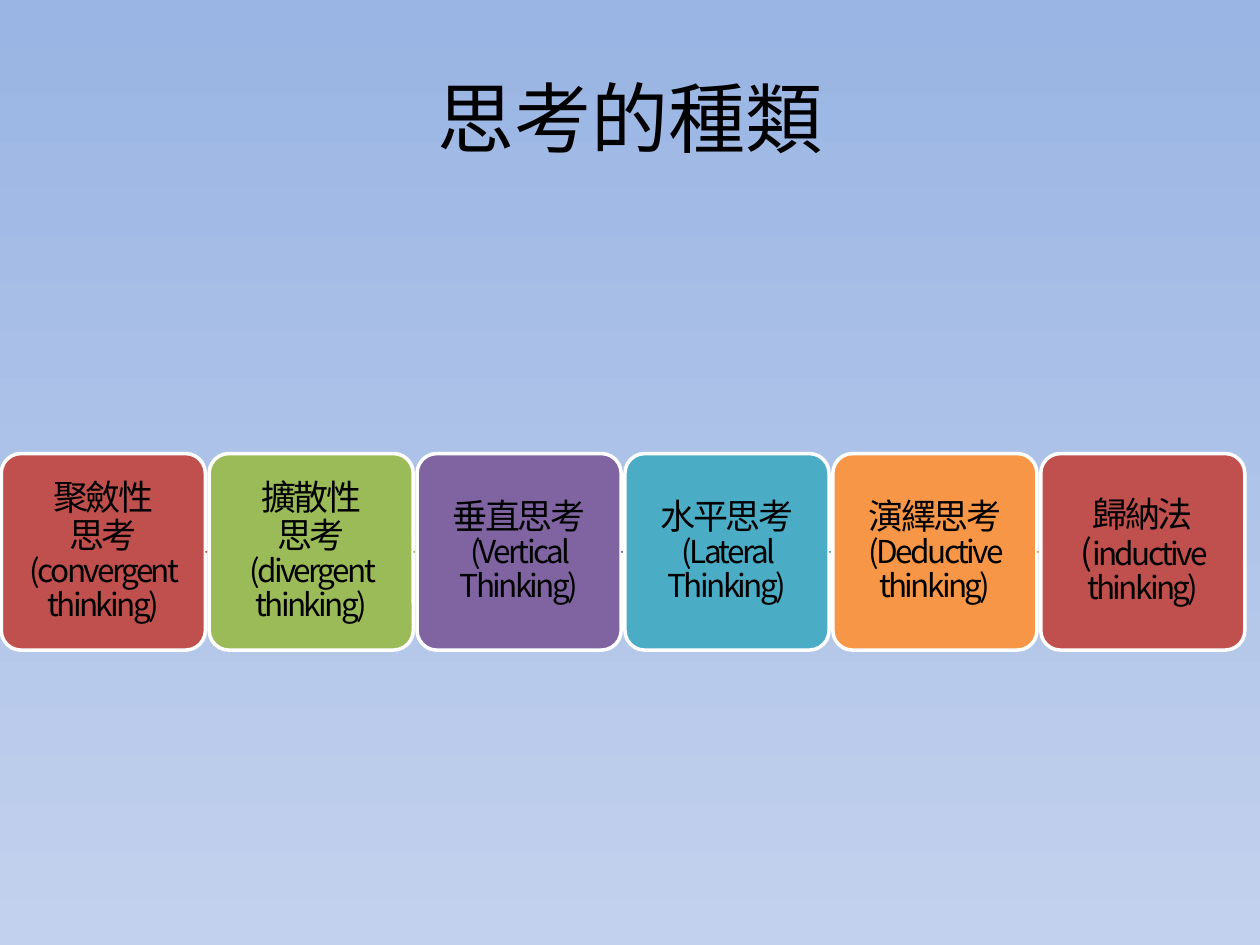
from lxml import etree
from pptx import Presentation
from pptx.dml.color import RGBColor
from pptx.enum import shapes, text
from pptx.oxml import ns
from pptx.util import Inches, Pt

FONT = "Noto Sans CJK SC"
BLACK = RGBColor(0x00, 0x00, 0x00)
WHITE = RGBColor(0xFF, 0xFF, 0xFF)
TOP = RGBColor(0x9A, 0xB5, 0xE4)
BASE = RGBColor(0xC2, 0xD1, 0xED)
RED = RGBColor(0xC0, 0x50, 0x4D)
GREEN = RGBColor(0x9B, 0xBB, 0x59)
PURPLE = RGBColor(0x80, 0x64, 0xA2)
TEAL = RGBColor(0x4B, 0xAC, 0xC6)
ORANGE = RGBColor(0xF7, 0x96, 0x46)


def write(para, words, size, space=0):
    """Add words to a paragraph; a newline becomes a line break."""
    for n, line in enumerate(words.split("\n")):
        if n:
            para.add_line_break()
        run = para.add_run()
        run.text = line
        run.font.size = Pt(size)
        run.font.name = FONT
        run.font.color.rgb = BLACK
        props = run.font._element
        if space:
            props.set("spc", str(int(space * 100)))
        latin = props.find(ns.qn("a:latin"))
        asian = etree.Element(ns.qn("a:ea"), typeface=FONT)
        latin.addnext(asian)


def draw(kind, left, top, width, height, fill):
    """Add a filled preset shape without line or shadow."""
    shape = slide.shapes.add_shape(
        kind, Inches(left), Inches(top), Inches(width), Inches(height))
    shape.shadow.inherit = False
    shape.fill.solid()
    shape.fill.fore_color.rgb = fill
    shape.line.fill.background()
    return shape


deck = Presentation()
deck.slide_width, deck.slide_height = Inches(10), Inches(7.5)
slide = deck.slides.add_slide(deck.slide_layouts[6])

# Background, shaded from top to bottom
back = slide.background.fill
back.gradient()
back.gradient_angle = 270
for stop, color in zip(back.gradient_stops, (TOP, BASE)):
    stop.color.rgb = color

# Title
title = slide.shapes.add_textbox(
    Inches(0.5), Inches(0.3), Inches(9), Inches(1.25)).text_frame
title.word_wrap = True
title.vertical_anchor = text.MSO_ANCHOR.MIDDLE
title.paragraphs[0].alignment = text.PP_ALIGN.CENTER
write(title.paragraphs[0], "思考的種類", size=44)

# Row of thinking types, with a tiny arrow in each gap
kinds = [
    ("聚斂性\n思考", "(convergent thinking)", RED),
    ("擴散性\n思考", "(divergent thinking)", GREEN),
    ("垂直思考", "(Vertical Thinking)", PURPLE),
    ("水平思考", "(Lateral Thinking)", TEAL),
    ("演繹思考", "(Deductive thinking)", ORANGE),
    ("歸納法(", "inductive thinking)", RED),
]
STEP, WIDTH = 1.65, 1.62
for i, (name, gloss, color) in enumerate(kinds):
    left = 0.01 + i * STEP
    card = draw(shapes.MSO_SHAPE.ROUNDED_RECTANGLE,
                left, 3.6, WIDTH, 1.56, color)
    card.adjustments[0] = 0.1
    card.line.color.rgb = WHITE
    card.line.width = Pt(2)

    frame = card.text_frame
    frame.word_wrap = True
    frame.vertical_anchor = text.MSO_ANCHOR.MIDDLE
    frame.margin_left = frame.margin_right = Inches(0.08)
    frame.margin_top = frame.margin_bottom = Inches(0.08)
    para = frame.paragraphs[0]
    para.alignment = text.PP_ALIGN.CENTER
    para.line_spacing = 0.9
    write(para, name, size=20, space=-1.5)
    write(para, gloss, size=18, space=-1.5)

    if i < len(kinds) - 1:
        arrow = draw(shapes.MSO_SHAPE.RIGHT_ARROW,
                     left + WIDTH, 4.37, 0.02, 0.02, color)
        arrow.adjustments[0] = 0.6

deck.save("out.pptx")
